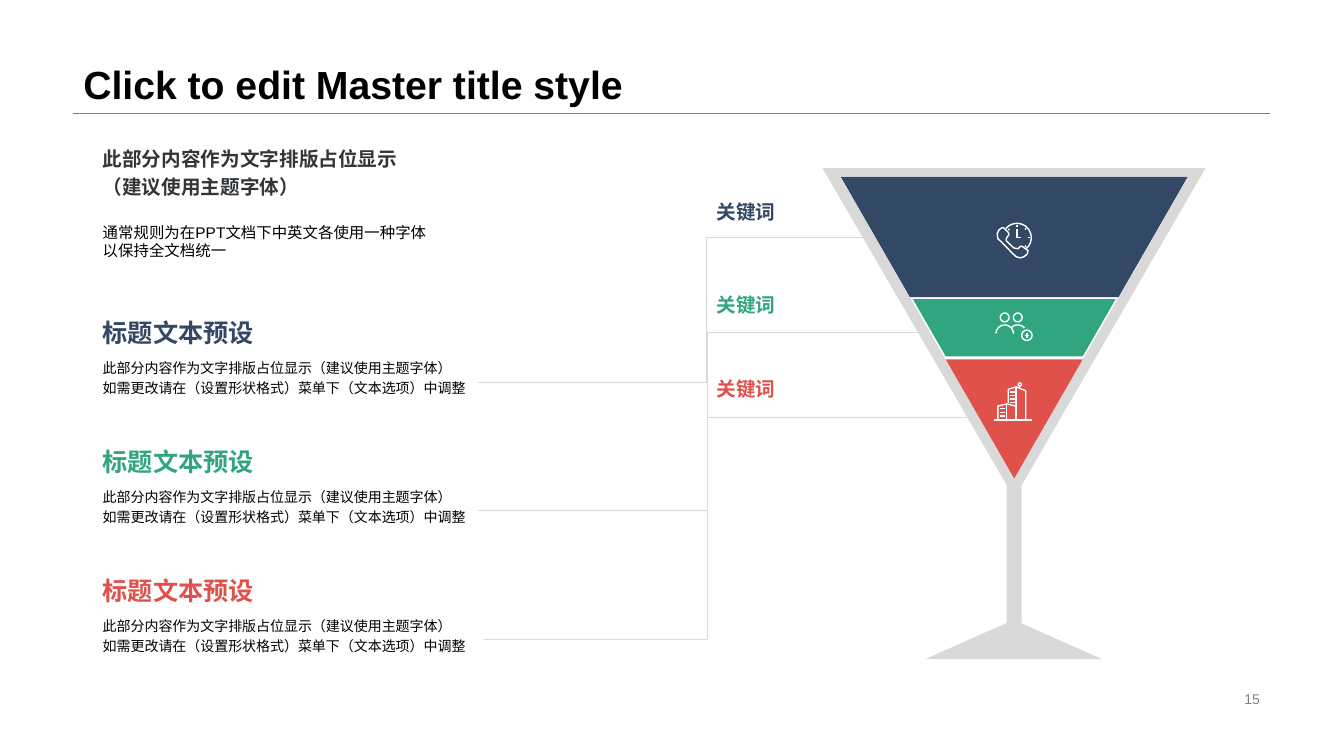
from copy import deepcopy
from math import cos, radians, sin

from pptx import Presentation
from pptx.dml.color import RGBColor
from pptx.enum.shapes import MSO_CONNECTOR as Link, MSO_SHAPE as Kind
from pptx.enum.text import MSO_ANCHOR as Anchor, PP_ALIGN as Align
from pptx.oxml.ns import qn
from pptx.oxml.xmlchemy import OxmlElement as Element
from pptx.util import Cm, Pt

NAVY = RGBColor(0x32, 0x48, 0x65)
GREEN = RGBColor(0x30, 0xA5, 0x80)
RED = RGBColor(0xDF, 0x51, 0x4A)
GREY = RGBColor(0xD9, 0xD9, 0xD9)
MID = RGBColor(0x80, 0x80, 0x80)
DARK = RGBColor(0x33, 0x36, 0x39)
BLACK = RGBColor(0, 0, 0)
WHITE = RGBColor(0xFF, 0xFF, 0xFF)


def arc(x, y, r, start=0, stop=360):
    """Points along an arc, clockwise from the right."""
    angles = [radians(start + (stop - start) * i / 24) for i in range(25)]
    return [(x + r * cos(a), y + r * sin(a)) for a in angles]


# Content (lengths in cm)
TITLE = "Click to edit Master title style"
PAGE = "15"
LEAD = "此部分内容作为文字排版占位显示\n（建议使用主题字体）"
RULE = "通常规则为在PPT文档下中英文各使用一种字体以保持全文档统一"
HEAD = "标题文本预设"
BODY = ("此部分内容作为文字排版占位显示（建议使用主题字体）\n"
        "如需更改请在（设置形状格式）菜单下（文本选项）中调整")
KEY = "关键词"

# colour, keyword top, link start, link end
ITEMS = [
    (NAVY, 4.62, (22.05, 5.97), (12.04, 9.63)),
    (GREEN, 6.96, (23.32, 8.36), (12.04, 12.85)),
    (RED, 9.07, (24.82, 10.52), (12.19, 16.1)),
]
LEVELS = [4.45, 7.49, 9.02, 12.07]
MID_X, HALF, BEND = 25.56, 4.38, 17.81

PHONE = [
    [(.15, .13), (.08, .18), (.03, .28), (.05, .41), (.13, .48), (.43, .79),
     (.51, .86), (.61, .89), (.71, .86), (.79, .79), (.81, .71), (.66, .6),
     (.61, .6), (.56, .66), (.45, .64), (.26, .46), (.26, .4), (.33, .3),
     (.31, .25), (.19, .13), (.15, .13)],
    arc(.53, .38, .36, 220, 410),
    [(.53, .16), (.53, .38), (.64, .38)],
    [(.53, .05), (.53, .1)],
    [(.82, .38), (.86, .38)],
    [(.73, .17), (.76, .15)],
    [(.73, .58), (.76, .62)],
    [(.31, .16), (.34, .19)],
]
PEOPLE = [
    arc(.25, .13, .11), arc(.58, .13, .11), arc(.81, .58, .13),
    arc(.25, .54, .22, 180, 360), arc(.58, .54, .22, 225, 320),
    [(.75, .58), (.87, .58)],
    [(.81, .52), (.81, .64)],
]
TOWER = [
    [(0, .95), (.97, .95)],
    [(.11, .95), (.11, .6), (.34, .55), (.58, .61)],
    [(.32, .55), (.32, .95)],
    [(.37, .53), (.37, .18), (.57, .12), (.81, .22), (.81, .95)],
    [(.57, .12), (.57, .95)],
    [(.66, .15), (.66, .1)],
    arc(.66, .06, .04),
    *[[(.15, y), (.28, y)] for y in (.67, .76, .85)],
    *[[(.41, y), (.53, y)] for y in (.25, .34, .43, .52)],
]
ICONS = [(25.1, 5.61, PHONE), (25.07, 7.87, PEOPLE), (25.04, 9.63, TOWER)]

deck = Presentation()
deck.slide_width, deck.slide_height = Cm(33.87), Cm(19.05)
shapes = deck.slides.add_slide(deck.slide_layouts[6]).shapes


def write(text, box, size, color, bold=False, space=None, wrap=True,
          anchor=Anchor.TOP, align=Align.LEFT):
    frame = shapes.add_textbox(*map(Cm, box)).text_frame
    frame.word_wrap, frame.vertical_anchor = wrap, anchor
    para = frame.paragraphs[0]
    para.text, para.alignment = text, align
    if space:
        para.line_spacing = space
    for run in para.runs:
        font = run.font
        font.name, font.size, font.bold = "Arial", Pt(size), bold
        font.color.rgb = color
    # Line breaks take the size of the text around them
    for gap in para._p.findall(qn("a:br")):
        gap.insert(0, deepcopy(para.runs[0]._r.rPr))


def link(kind, start, end, color):
    line = shapes.add_connector(kind, *map(Cm, start + end))
    line.line.color.rgb, line.line.width = color, Pt(.25)
    line._element.spPr.append(Element("a:effectLst"))
    return line


def paint(shape, fill=None, edge=None, width=1):
    shape.shadow.inherit = False
    if fill is None:
        shape.fill.background()
    else:
        shape.fill.solid()
        shape.fill.fore_color.rgb = fill
    if edge is None:
        shape.line.fill.background()
    else:
        shape.line.color.rgb, shape.line.width = edge, Pt(width)


def outline(paths, close=True, x=0, y=0):
    paths = [[(Cm(x + a), Cm(y + b)) for a, b in path] for path in paths]
    form = shapes.build_freeform(*paths[0][0], scale=1.0)
    for i, path in enumerate(paths):
        if i:
            form.move_to(*path[0])
        form.add_line_segments(path[1:], close=close)
    return form.convert_to_shape()


# Title and lead text
link(Link.STRAIGHT, (1.85, 2.84), (32, 2.84), MID)
write(TITLE, (1.85, 0, 30.15, 2.84), 28, BLACK, True, .9, anchor=Anchor.BOTTOM)
write(PAGE, (23.93, 17.32, 8.07, .58), 10, MID, anchor=Anchor.MIDDLE,
      align=Align.RIGHT)
write(LEAD, (2.34, 3.45, 8.86, 2.03), 14, DARK, True, 1.2)
write(RULE, (2.34, 5.49, 8.86, 1.17), 11, BLACK)

# Left blocks and their links
for i, (color, top, start, end) in enumerate(ITEMS):
    y = 7.87 + 3.25 * i
    write(BODY, (2.34, y + .97, 9.7, 1.55), 10, BLACK, space=1.2)
    write(HEAD, (2.34, y, 9.7, .97), 18, color, True, wrap=False)
    elbow = link(Link.ELBOW, start, end, GREY)
    bend = Element("a:gd")
    bend.set("name", "adj1")
    share = (start[0] - BEND) / (start[0] - end[0])
    bend.set("fmla", f"val {round(share * 100000)}")
    elbow._element.spPr.find(qn("a:prstGeom")).find(qn("a:avLst")).append(bend)

# Layers of the drink, bottom first
for i in (2, 1, 0):
    color, edges = ITEMS[i][0], LEVELS[i:i + 2]
    high, low = [HALF * (LEVELS[-1] - y) / (LEVELS[-1] - LEVELS[0])
                 for y in edges]
    layer = outline([[(MID_X - high, edges[0]), (MID_X + high, edges[0]),
                      (MID_X + low, edges[1]), (MID_X - low, edges[1])]])
    paint(layer, color, WHITE if color == GREEN else None, 2.25)

# Glass: bowl, stem and base
bowl = outline([
    [(20.73, 4.24), (30.38, 4.24), (MID_X, 12.55)],
    [(MID_X - HALF, LEVELS[0]), (MID_X, LEVELS[-1]), (MID_X + HALF, LEVELS[0])],
])
paint(bowl, GREY)
for kind, box in [(Kind.RECTANGLE, (25.37, 12.09, .38, 3.76)),
                  (Kind.ISOSCELES_TRIANGLE, (23.32, 15.62, 4.45, .99))]:
    paint(shapes.add_shape(kind, *map(Cm, box)), GREY)

# Icons and keywords
for x, y, paths in ICONS:
    paint(outline(paths, False, x, y), edge=WHITE)
for color, top, *ends in ITEMS:
    write(KEY, (BEND, top, 2.54, 1.45), 14, color, True, wrap=False,
          anchor=Anchor.MIDDLE)

deck.save("out.pptx")
